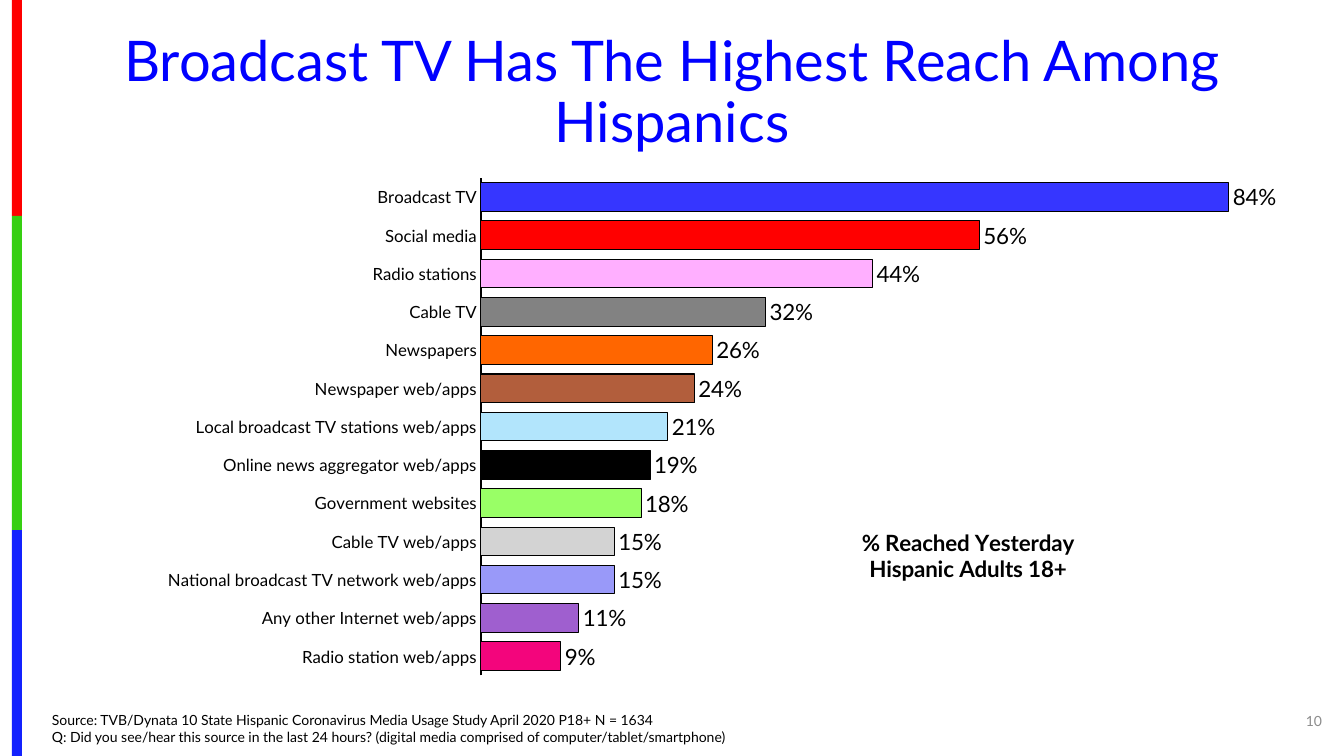
import pptx
import pptx.chart.data
import pptx.dml.color
import pptx.enum.chart
import pptx.enum.shapes
import pptx.enum.text
import pptx.oxml
import pptx.oxml.ns
import pptx.util

RGBColor = pptx.dml.color.RGBColor
Pt = pptx.util.Pt
PP_ALIGN = pptx.enum.text.PP_ALIGN
MSO_ANCHOR = pptx.enum.text.MSO_ANCHOR

PX = 9071  # EMU in one px
FONT = "Lato"
BLACK = RGBColor(0x00, 0x00, 0x00)
TITLE_BLUE = RGBColor(0x00, 0x00, 0xFF)
GREY = RGBColor(0x8C, 0x8C, 0x8C)
STRIPE_RED = RGBColor(0xFE, 0x00, 0x00)
STRIPE_GREEN = RGBColor(0x36, 0xCF, 0x12)
STRIPE_BLUE = RGBColor(0x13, 0x22, 0xFE)

MEDIA = [
    ("Broadcast TV", 0.84, RGBColor(0x36, 0x36, 0xFF)),
    ("Social media", 0.56, RGBColor(0xFF, 0x00, 0x00)),
    ("Radio stations", 0.44, RGBColor(0xFF, 0xAF, 0xFF)),
    ("Cable TV", 0.32, RGBColor(0x82, 0x82, 0x82)),
    ("Newspapers", 0.26, RGBColor(0xFF, 0x66, 0x00)),
    ("Newspaper web/apps", 0.24, RGBColor(0xB2, 0x5E, 0x3C)),
    ("Local broadcast TV stations web/apps", 0.21, RGBColor(0xB2, 0xE5, 0xFC)),
    ("Online news aggregator web/apps", 0.19, RGBColor(0x00, 0x00, 0x00)),
    ("Government websites", 0.18, RGBColor(0x99, 0xFF, 0x66)),
    ("Cable TV web/apps", 0.15, RGBColor(0xD3, 0xD3, 0xD3)),
    ("National broadcast TV network web/apps", 0.15, RGBColor(0x99, 0x99, 0xF9)),
    ("Any other Internet web/apps", 0.11, RGBColor(0x9F, 0x5F, 0xCF)),
    ("Radio station web/apps", 0.09, RGBColor(0xF3, 0x05, 0x7C)),
]


def add_text(text, box, size=10, color=BLACK, align=PP_ALIGN.LEFT,
             anchor=MSO_ANCHOR.MIDDLE, spacing=1.0):
    sp = slide.shapes.add_textbox(*[n * PX for n in box])
    tf = sp.text_frame
    tf.word_wrap = True
    tf.vertical_anchor = anchor
    tf.text = text
    for p in tf.paragraphs:
        p.alignment = align
        p.line_spacing = spacing
        p.font.name = FONT
        p.font.size = Pt(size)
        p.font.color.rgb = color


def set_layout(parent, index, **values):
    """Place a chart part by hand, in fractions of the chart area."""
    for old in parent.findall(pptx.oxml.ns.qn("c:layout")):
        parent.remove(old)
    items = "".join(f'<c:{k} val="{v}"/>' for k, v in values.items())
    parent.insert(index, pptx.oxml.parse_xml(
        f'<c:layout {pptx.oxml.ns.nsdecls("c")}>'
        f"<c:manualLayout>{items}</c:manualLayout></c:layout>"))


prs = pptx.Presentation()
prs.slide_width, prs.slide_height = 1344 * PX, 756 * PX
slide = prs.slides.add_slide(prs.slide_layouts[6])

# Stripe down the left edge
top = 0
for bottom, color in [(216, STRIPE_RED), (530, STRIPE_GREEN), (756, STRIPE_BLUE)]:
    sp = slide.shapes.add_shape(pptx.enum.shapes.MSO_SHAPE.RECTANGLE,
                                12 * PX, top * PX, 10 * PX, (bottom - top) * PX)
    sp.shadow.inherit = False
    sp.fill.solid()
    sp.fill.fore_color.rgb = color
    sp.line.fill.background()
    top = bottom

add_text("Broadcast TV Has The Highest Reach Among Hispanics", (42, 28, 1260, 132),
         size=40, color=TITLE_BLUE, align=PP_ALIGN.CENTER, spacing=0.9)

# Reach chart
data = pptx.chart.data.CategoryChartData(number_format="0%")
data.categories = [name for name, _, _ in MEDIA]
data.add_series("Series 1", [value for _, value, _ in MEDIA])
chart = slide.shapes.add_chart(pptx.enum.chart.XL_CHART_TYPE.BAR_CLUSTERED,
                               56 * PX, 151 * PX, 1235 * PX, 526 * PX, data).chart
chart.has_legend = False
chart.font.name = FONT
chart.font.size = Pt(10)
chart.font.color.rgb = BLACK

chart.has_title = True
title = chart.chart_title
title.text_frame.text = "% Reached Yesterday\nHispanic Adults 18+"
for p in title.text_frame.paragraphs:
    p.font.name = FONT
    p.font.size = Pt(16)
    p.font.bold = True
    p.font.color.rgb = BLACK
title.include_in_layout = False
set_layout(title._element, 1, xMode="edge", yMode="edge", x=0.65, y=0.71)
set_layout(chart._chartSpace.chart.plotArea, 0, layoutTarget="inner",
           xMode="edge", yMode="edge", x=0.344, y=0.051, w=0.649, h=0.946)

axis = chart.category_axis
axis.reverse_order = True
axis.major_tick_mark = pptx.enum.chart.XL_TICK_MARK.NONE
axis.tick_labels.font.name = FONT
axis.tick_labels.font.size = Pt(12)
axis.tick_labels.font.color.rgb = BLACK
axis.format.line.color.rgb = BLACK
axis.format.line.width = Pt(1.5)

chart.value_axis.visible = False
chart.value_axis.has_major_gridlines = False
chart.value_axis.minimum_scale = 0
chart.value_axis.maximum_scale = 0.9

plot = chart.plots[0]
plot.gap_width = 34
plot.vary_by_categories = False
plot.has_data_labels = True
labels = plot.data_labels
labels.show_value = True
labels.number_format = "0%"
labels.number_format_is_linked = False
labels.position = pptx.enum.chart.XL_LABEL_POSITION.OUTSIDE_END
labels.font.name = FONT
labels.font.size = Pt(16)
labels.font.color.rgb = BLACK

for i, (_, _, color) in enumerate(MEDIA):
    bar = plot.series[0].points[i].format
    bar.fill.solid()
    bar.fill.fore_color.rgb = color
    bar.line.color.rgb = BLACK
    bar.line.width = Pt(0.75)

# Footer
add_text("Source: TVB/Dynata 10 State Hispanic Coronavirus Media Usage Study April 2020 P18+ N = 1634\n"
         "Q: Did you see/hear this source in the last 24 hours? "
         "(digital media comprised of computer/tablet/smartphone)",
         (42, 723, 1082, 27), anchor=MSO_ANCHOR.BOTTOM)
add_text("10", (1272, 701, 60, 40), color=GREY, align=PP_ALIGN.RIGHT)

prs.save("out.pptx")
